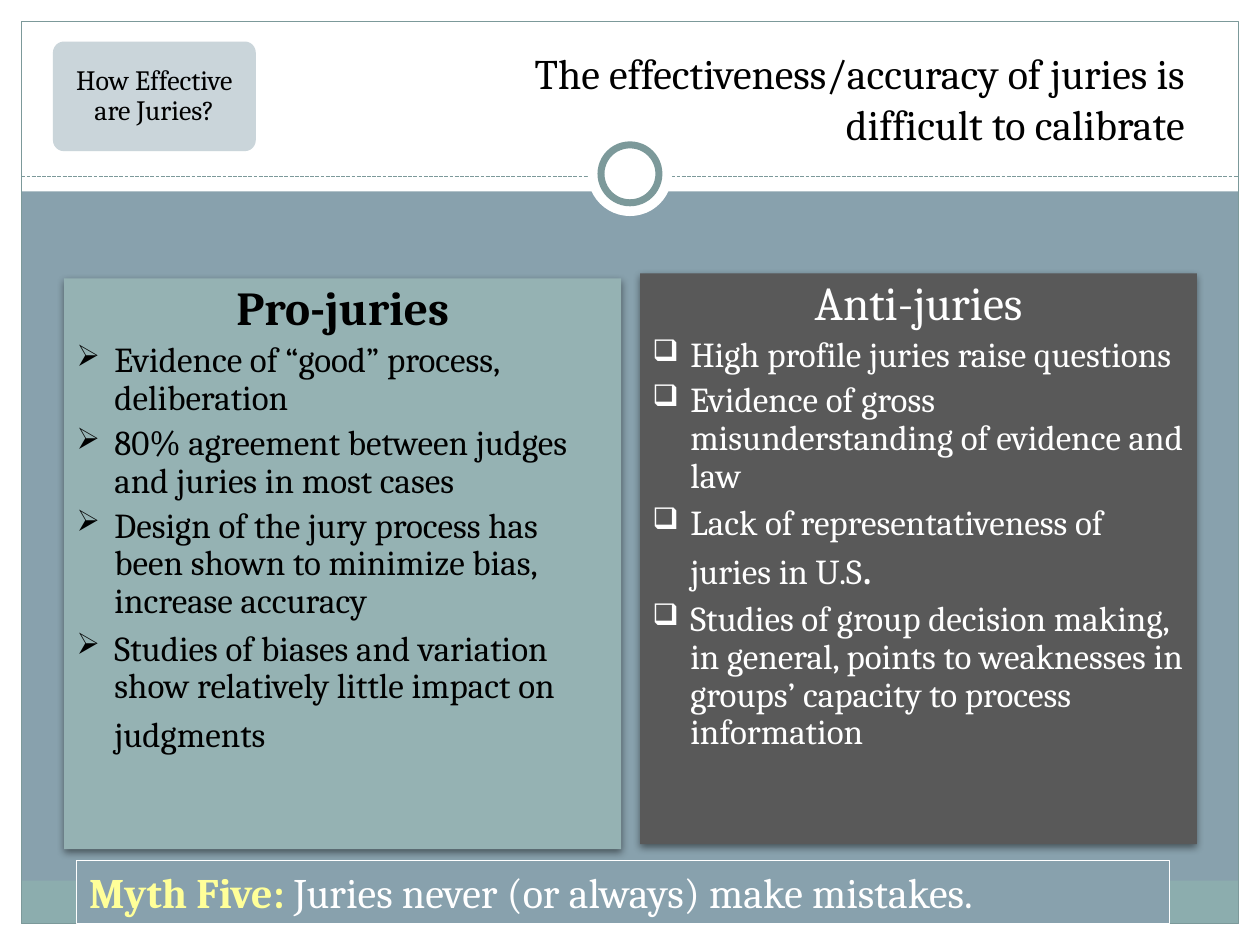
from dataclasses import dataclass

from lxml.etree import SubElement
from pptx import Presentation
from pptx.dml.color import RGBColor
from pptx.enum.dml import MSO_LINE
from pptx.enum.shapes import MSO_CONNECTOR, MSO_SHAPE
from pptx.enum.text import MSO_ANCHOR, PP_ALIGN
from pptx.oxml.ns import qn
from pptx.util import Inches, Pt


@dataclass(frozen=True)
class Theme:
    font: str = "Cambria"
    backdrop: str = "88A1AD"
    white: str = "FFFFFF"
    black: str = "000000"
    band: str = "8CADAE"
    rule: str = "7C999A"
    topic: str = "C5D1D7"
    pro: str = "95B2B3"
    anti: str = "595959"
    highlight: str = "FFFF99"
    heading_size: int = 27
    title_size: int = 24
    body_size: int = 20
    topic_size: int = 16


@dataclass(frozen=True)
class Box:
    left: float
    top: float
    width: float
    height: float

    def inner(self, left, top, width, height):
        return Box(self.left + left, self.top + top, width, height)

    def lengths(self):
        return [Inches(v) for v in (self.left, self.top, self.width, self.height)]


THEME = Theme()


def apply_format(target, values):
    for name, value in values.items():
        setattr(target, name, value)


def add_block(slide, box, fill=None, line=None, weight=0.75, kind=MSO_SHAPE.RECTANGLE):
    block = slide.shapes.add_shape(kind, *box.lengths())
    block.shadow.inherit = False
    if fill:
        block.fill.solid()
        block.fill.fore_color.rgb = RGBColor.from_string(fill)
    else:
        block.fill.background()
    if line:
        block.line.color.rgb = RGBColor.from_string(line)
        block.line.width = Pt(weight)
    else:
        block.line.fill.background()
    return block


def add_shadow(block):
    effects = block._element.spPr.find(qn("a:effectLst"))
    shadow = SubElement(effects, qn("a:outerShdw"), blurRad=str(Pt(4)), dist=str(Pt(2)),
                        dir="5400000", rotWithShape="0")
    color = SubElement(shadow, qn("a:srgbClr"), val=THEME.black)
    SubElement(color, qn("a:alpha"), val="45000")


def prepare_frame(frame, **values):
    apply_format(frame, {"word_wrap": True, "vertical_anchor": MSO_ANCHOR.TOP, **values})
    return frame.paragraphs[0]


def write(paragraph, text, size, color, bold=False):
    run = paragraph.add_run()
    run.text = text
    apply_format(run.font, {"name": THEME.font, "size": Pt(size), "bold": bold})
    run.font.color.rgb = RGBColor.from_string(color)


def add_bullet(paragraph, mark):
    properties = paragraph._p.get_or_add_pPr()
    properties.set("marL", str(Inches(0.3)))
    properties.set("indent", str(Inches(-0.3)))
    SubElement(properties, qn("a:buSzPct"), val="85000")
    SubElement(properties, qn("a:buChar"), char=mark)


def draw_frame(slide, box):
    margin, header = 0.17, 1.52
    right, bottom = box.width - margin, box.height - margin
    inside = box.width - 2 * margin
    for edge in ((0, bottom, box.width, margin), (0, 0, box.width, header),
                 (0, 0, margin, box.height), (right, 0, margin, box.height)):
        add_block(slide, box.inner(*edge), THEME.white)
    add_block(slide, box.inner(margin, bottom - 0.34, inside, 0.34), THEME.band)
    add_block(slide, box.inner(margin, margin, inside, bottom - margin), line=THEME.rule)

    divider_y = Inches(box.top + 1.4)
    divider = slide.shapes.add_connector(
        MSO_CONNECTOR.STRAIGHT, Inches(box.left + margin), divider_y,
        Inches(box.left + right), divider_y)
    apply_format(divider.line, {"width": Pt(0.75), "dash_style": MSO_LINE.SQUARE_DOT})
    divider.line.color.rgb = RGBColor.from_string(THEME.rule)
    SubElement(divider._element.spPr, qn("a:effectLst"))

    for diameter, line in ((0.67, None), (0.46, THEME.rule)):
        ring = box.inner((box.width - diameter) / 2, 1.38 - diameter / 2, diameter, diameter)
        add_block(slide, ring, THEME.white, line, 4, MSO_SHAPE.OVAL)


def draw_topic(slide, box, text):
    topic = add_block(slide, box, THEME.topic, kind=MSO_SHAPE.ROUNDED_RECTANGLE)
    topic.adjustments[0] = 0.1
    color = topic._element.spPr.find(qn("a:solidFill"))[0]
    SubElement(color, qn("a:alpha"), val="90000")
    side, end = Inches(0.06), Inches(0.05)
    paragraph = prepare_frame(topic.text_frame, vertical_anchor=MSO_ANCHOR.MIDDLE,
                              margin_left=side, margin_right=side,
                              margin_top=end, margin_bottom=end)
    apply_format(paragraph, {"alignment": PP_ALIGN.CENTER, "line_spacing": 0.9})
    write(paragraph, text, THEME.topic_size, THEME.black)


def draw_title(slide, box, text):
    title = slide.shapes.add_textbox(*box.lengths())
    paragraph = prepare_frame(title.text_frame)
    paragraph.alignment = PP_ALIGN.RIGHT
    write(paragraph, text, THEME.title_size, THEME.black)


def draw_panel(slide, box, fill, color, heading, bold, mark, points):
    panel = add_block(slide, box, fill)
    add_shadow(panel)
    paragraph = prepare_frame(panel.text_frame)
    spacing = {"line_spacing": 0.9, "space_before": Pt(0.2 * THEME.heading_size)}
    apply_format(paragraph, {"alignment": PP_ALIGN.CENTER, **spacing})
    write(paragraph, heading, THEME.heading_size, color, bold)
    for text, ending in points:
        paragraph = panel.text_frame.add_paragraph()
        tallest = THEME.heading_size if ending else THEME.body_size
        apply_format(paragraph, {"alignment": PP_ALIGN.LEFT, "line_spacing": 0.9,
                                 "space_before": Pt(0.2 * tallest)})
        add_bullet(paragraph, mark)
        write(paragraph, text, THEME.body_size, color)
        if ending:
            write(paragraph, ending, THEME.heading_size, color)


def draw_myth(slide, box, label, claim):
    myth = add_block(slide, box, THEME.backdrop, THEME.white)
    paragraph = prepare_frame(myth.text_frame)
    paragraph.alignment = PP_ALIGN.LEFT
    write(paragraph, label, THEME.title_size, THEME.highlight, True)
    write(paragraph, claim, THEME.title_size, THEME.white)


def main():
    deck = Presentation()
    page = Box(0, 0, 10, 7.5)
    apply_format(deck, {"slide_width": Inches(page.width), "slide_height": Inches(page.height)})
    slide = deck.slides.add_slide(deck.slide_layouts[6])
    slide.background.fill.solid()
    slide.background.fill.fore_color.rgb = RGBColor.from_string(THEME.backdrop)

    draw_frame(slide, page)
    draw_topic(slide, Box(0.42, 0.33, 1.61, 0.87), "How Effective are Juries?")
    draw_panel(slide, Box(0.51, 2.21, 4.42, 4.53), THEME.pro, THEME.black, "Pro-juries", True, "➢", [
        ("Evidence of “good” process, deliberation", ""),
        ("80% agreement between judges and juries in most cases", ""),
        ("Design of the jury process has been shown to minimize bias, increase accuracy", ""),
        ("Studies of biases and variation show relatively little impact on judgments", " "),
    ])
    draw_panel(slide, Box(5.08, 2.17, 4.42, 4.53), THEME.anti, THEME.white, "Anti-juries", False, "❑", [
        ("High profile juries raise questions", ""),
        ("Evidence of gross misunderstanding of evidence and law", ""),
        ("Lack of representativeness of juries in U.S", "."),
        ("Studies of group decision making, in general, points to weaknesses in "
         "groups’ capacity to process information", ""),
    ])
    draw_title(slide, Box(4, 0.33, 5.5, 1.25),
               "The effectiveness/accuracy of juries is difficult to calibrate")
    draw_myth(slide, Box(0.61, 6.83, 8.67, 0.5), "Myth Five:",
              " Juries never (or always) make mistakes.")
    deck.save("out.pptx")


if __name__ == "__main__":
    main()
